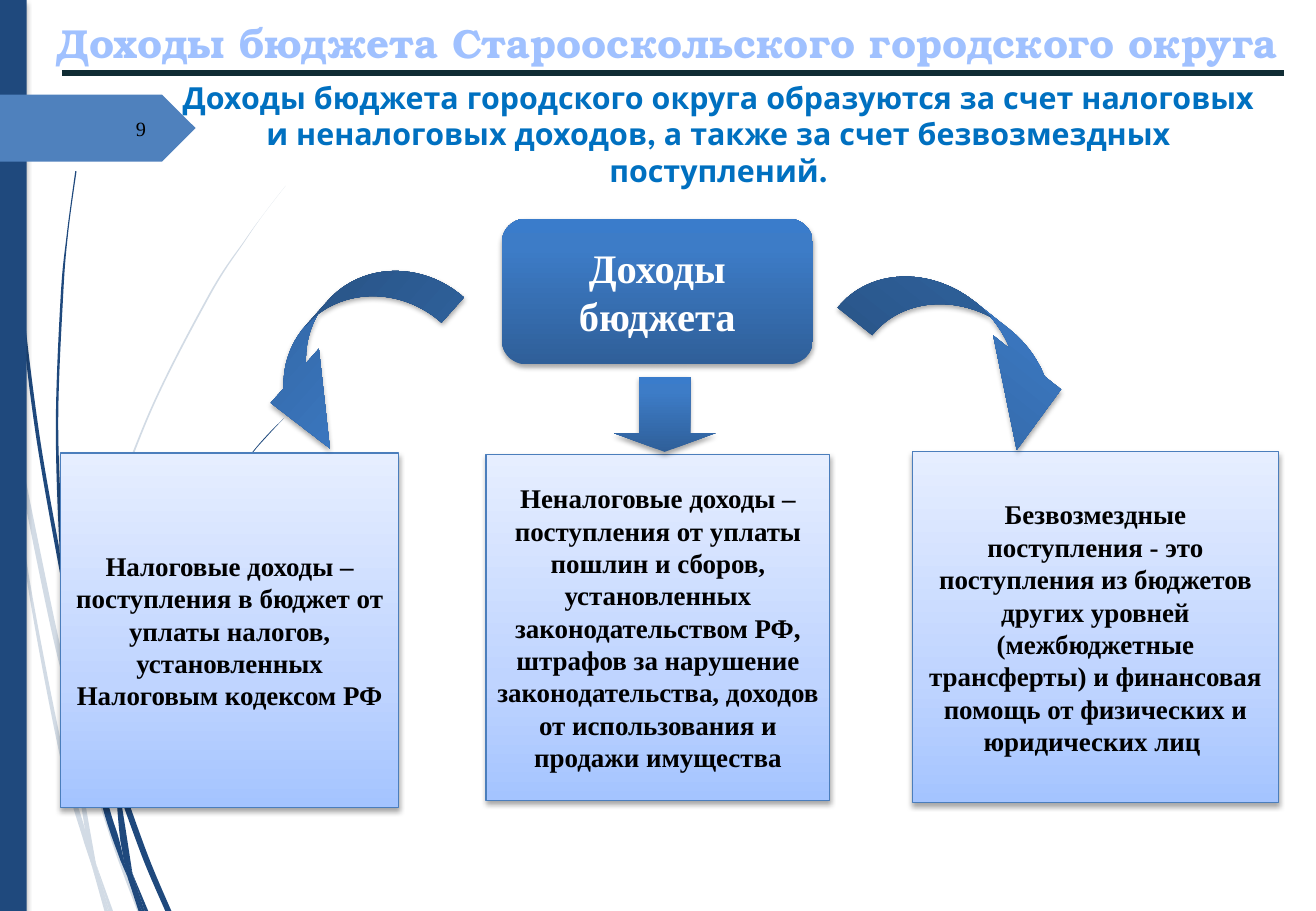
import pptx
import pptx.dml.color
import pptx.enum.shapes
import pptx.enum.text
import pptx.oxml
import pptx.oxml.ns
import pptx.util

Inches = pptx.util.Inches
Pt = pptx.util.Pt
Shape = pptx.enum.shapes.MSO_SHAPE
Align = pptx.enum.text.PP_ALIGN
Anchor = pptx.enum.text.MSO_ANCHOR

SERIF = "Times New Roman"
DRAWING = pptx.oxml.ns.nsdecls("a")
COLORS = {
    "navy": "1F497D", "mist": "D2DBE5", "badge": "4F81BD", "title": "A0C1FF",
    "subtitle": "0070C0", "rule": "102C34", "border": "4B7EBC",
    "black": "000000", "white": "FFFFFF",
}
DEEP_BLUE = [(0, "2F5F99"), (80, "3D7CC7"), (100, "3A7CCB")]
LIGHT_BLUE = [(0, "A4C4FF"), (35, "BFD4FF"), (100, "E6EEFF")]

# Each wisp has two edges; each edge is a smooth curve through its points
PALE_WISPS = [
    ([(0, 2.82), (.06, 3.22), (.08, 3.5)], [(.07, 3.44), (0, 2.99)]),
    ([(.11, 3.45), (.47, 5.2), (.64, 5.86)], [(.63, 5.99), (.43, 5.22), (.13, 3.76)]),
    ([(.66, 5.96), (.69, 6.07), (.96, 6.91), (1.16, 7.5)],
     [(1.13, 7.5), (.92, 6.93), (.66, 6.1)]),
    ([(.79, 7.11), (.93, 7.5)], [(.9, 7.5)]),
    ([(.08, 3.5), (.13, 3.76), (.23, 4.69), (.52, 6.19), (.7, 6.83), (.76, 7.14)],
     [(.69, 6.93), (.49, 6.21), (.21, 4.7), (.08, 3.5)]),
    ([(.63, 5.99), (.66, 6.1), (.68, 6.46), (.79, 7.11)],
     [(.72, 6.92), (.7, 6.83), (.65, 6.46), (.63, 5.99)]),
    ([(2.35, 1.53), (2.18, 1.75), (2.02, 1.97), (1.71, 2.44), (1.19, 3.48),
      (.81, 4.61), (.64, 5.84)],
     [(.66, 5.96), (.66, 5.84), (.83, 4.62), (1.2, 3.49), (1.72, 2.45),
      (2.02, 1.98), (2.18, 1.75), (2.35, 1.53)]),
    ([(.76, 7.14), (.89, 7.5)], [(.86, 7.5)]),
    ([(.64, 5.86), (.66, 5.96), (.66, 6.1)], [(.63, 5.99)]),
    ([(.7, 6.83), (.79, 7.11), (.9, 7.5)], [(.89, 7.5), (.76, 7.14), (.7, 6.83)]),
]
DARK_WISPS = [
    ([(.02, 0), (.03, .48), (.06, 1.1), (.15, 2.33), (.29, 3.55), (.51, 4.81)],
     [(.49, 4.53), (.32, 3.55), (.17, 2.32), (.07, 1.09), (.04, .48), (.03, 0)]),
    ([(.54, 4.72), (.83, 5.9), (.95, 6.31)], [(.95, 6.45), (.79, 5.92), (.57, 5.05)]),
    ([(.99, 6.41), (1.22, 7.05), (1.41, 7.5)], [(1.36, 7.5), (1.18, 7.08), (.99, 6.56)]),
    ([(.51, 4.77), (.57, 5.05), (.65, 5.56), (.88, 6.57), (.98, 6.91), (1.05, 7.22)],
     [(.99, 7.08), (.83, 6.59), (.61, 5.57), (.51, 4.77)]),
    ([(.63, 1.41), (.56, 1.93), (.52, 2.44), (.48, 3.49), (.52, 4.53), (.54, 4.72)],
     [(.53, 4.71), (.49, 4.49), (.46, 3.49), (.5, 2.44), (.55, 1.93), (.62, 1.41)]),
    ([(1.09, 7.19), (1.22, 7.5)], [(1.19, 7.5)]),
    ([(.49, 4.49), (.54, 4.72), (.57, 5.05)], [(.51, 4.77)]),
    ([(2.34, 3.44), (2.2, 3.58), (2.07, 3.73), (1.82, 4.05), (1.4, 4.74),
      (1.09, 5.51), (.95, 6.31)],
     [(.99, 6.41), (.99, 6.33), (1.12, 5.52), (1.42, 4.76), (1.83, 4.06),
      (2.07, 3.74), (2.2, 3.59), (2.34, 3.44)]),
    ([(1.05, 7.22), (1.17, 7.5)], [(1.14, 7.5)]),
    ([(.95, 6.45), (.99, 6.56), (1.09, 7.19)], [(1.04, 7.06), (.99, 6.91), (.95, 6.45)]),
    ([(.95, 6.31), (.99, 6.41), (.99, 6.56)], [(.95, 6.45)]),
    ([(.99, 6.91), (1.09, 7.19), (1.19, 7.5)], [(1.17, 7.5), (1.05, 7.22), (.99, 6.91)]),
]
INCOME_KINDS = [
    ((.5, 3.73, 2.78, 2.92), .12,
     "Налоговые доходы – поступления в бюджет от уплаты налогов, установленных "
     "Налоговым кодексом РФ"),
    ((4, 3.74, 2.83, 2.85), 0,
     "Неналоговые доходы – поступления от уплаты пошлин и сборов, установленных "
     "законодательством РФ, штрафов за нарушение законодательства, доходов от "
     "использования и продажи имущества"),
    ((7.51, 3.72, 3.01, 2.89), .12,
     "Безвозмездные поступления - это поступления из бюджетов других уровней "
     "(межбюджетные трансферты) и финансовая помощь от физических и юридических лиц "),
]
ARROWS = [
    (Shape.CURVED_DOWN_ARROW, (6.88, 2.57, 2.24, .74), 38.5, (.492, .964, .834)),
    (Shape.CURVED_UP_ARROW, (1.88, 2.5, 1.96, .82), 131.6, (.338, .728, .747)),
    (Shape.DOWN_ARROW, (5.05, 3.1, .84, .62), 0, (.5, .25)),
]


def rgb(name):
    return pptx.dml.color.RGBColor.from_string(COLORS[name])


def curve_segments(edge):
    """Yield the two control points and the end of each curve along an edge."""
    padded = [edge[0], *edge, edge[-1]]
    for a, b, c, d in zip(padded, padded[1:], padded[2:], padded[3:]):
        yield ([q + (r - p) / 6 for p, q, r in zip(a, b, c)],
               [r - (s - q) / 6 for q, r, s in zip(b, c, d)], c)


def add_wisp(page, edges, color):
    down, back = [[(Inches(x), Inches(y)) for x, y in edge] for edge in edges]
    builder = page.shapes.build_freeform(*down[0], scale=1.0)
    builder.add_line_segments(down[1:] + back, close=True)
    shape = builder.convert_to_shape()
    lines = shape._element.spPr.findall(".//" + pptx.oxml.ns.qn("a:lnTo"))
    # The straight step between the two edges stays a line
    bends = lines[:len(down) - 1] + lines[len(down):]
    segments = [*curve_segments(down), *curve_segments(back)]
    for line, segment in zip(bends, segments):
        points = "".join(f'<a:pt x="{round(x - shape.left)}" y="{round(y - shape.top)}"/>'
                         for x, y in segment)
        line.getparent().replace(line, pptx.oxml.parse_xml(
            f'<a:cubicBezTo {DRAWING}>{points}</a:cubicBezTo>'))
    style_plain(shape, color)


def style_plain(shape, color):
    shape.fill.solid()
    shape.fill.fore_color.rgb = rgb(color)
    shape.line.fill.background()
    shape.shadow.inherit = False


def add_shadow(shape, opacity, blur, distance):
    shape.shadow.inherit = False
    effects = shape._element.spPr.find(pptx.oxml.ns.qn("a:effectLst"))
    effects.append(pptx.oxml.parse_xml(
        f'<a:outerShdw {DRAWING} blurRad="{Pt(blur)}" dist="{Pt(distance)}" '
        f'dir="5400000" rotWithShape="0"><a:srgbClr val="{COLORS["black"]}">'
        f'<a:alpha val="{opacity * 1000}"/></a:srgbClr></a:outerShdw>'))


def add_shape(page, kind, area, adjustments=()):
    shape = page.shapes.add_shape(kind, *map(Inches, area))
    for index, value in enumerate(adjustments):
        shape.adjustments[index] = value
    return shape


def add_gradient_shape(page, kind, area, stops, adjustments=()):
    shape = add_shape(page, kind, area, adjustments)
    marks = "".join(f'<a:gs pos="{place * 1000}"><a:srgbClr val="{color}"/></a:gs>'
                    for place, color in stops)
    shape._element.spPr.insert(2, pptx.oxml.parse_xml(
        f'<a:gradFill {DRAWING} rotWithShape="1"><a:gsLst>{marks}</a:gsLst>'
        '<a:lin ang="16200000" scaled="0"/></a:gradFill>'))
    shape.line.fill.background()
    add_shadow(shape, 35, 3.1, 1.8)
    return shape


def write(box, text, size, color, font=SERIF, bold=True, align=Align.CENTER,
          anchor=Anchor.MIDDLE, insets=(.1, .05)):
    frame = box.text_frame
    frame.word_wrap = True
    frame.vertical_anchor = anchor
    frame.margin_left = frame.margin_right = Inches(insets[0])
    frame.margin_top = frame.margin_bottom = Inches(insets[1])
    para = frame.paragraphs[0]
    para.text = text
    para.alignment = align
    para.font.name, para.font.size, para.font.bold = font, Pt(size), bold
    para.font.color.rgb = rgb(color)


def add_text(page, area, *content, **options):
    write(page.shapes.add_textbox(*map(Inches, area)), *content, **options)


def main():
    deck = pptx.Presentation()
    deck.slide_width, deck.slide_height = Inches(10.83), Inches(7.5)
    page = deck.slides.add_slide(deck.slide_layouts[6])

    # Background wisps, side band and page number badge
    for wisps, color in ((PALE_WISPS, "mist"), (DARK_WISPS, "navy")):
        for edges in wisps:
            add_wisp(page, edges, color)
    band = add_shape(page, Shape.RECTANGLE, (0, 0, .22, 7.5))
    style_plain(band, "navy")
    add_shadow(band, 25, 3, 2)
    style_plain(add_shape(page, Shape.PENTAGON, (0, .78, 1.61, .55), (.5,)), "badge")

    # Heading
    add_text(page, (.37, .1, 10.46, .62), "Доходы бюджета Старооскольского городского округа",
             24, "title", font="TeX Gyre Bonum", align=Align.LEFT, anchor=Anchor.TOP)
    add_text(page, (1.4, .6, 9.03, 1.34),
             "Доходы бюджета городского округа образуются за счет налоговых и неналоговых "
             "доходов, а также за счет безвозмездных поступлений.",
             18, "subtitle", font="League Spartan", anchor=Anchor.TOP)
    add_text(page, (.61, .86, .69, .4), "9", 12, "black", bold=False, align=Align.RIGHT)
    rule = page.shapes.add_connector(pptx.enum.shapes.MSO_CONNECTOR.STRAIGHT,
                                     Inches(.51), Inches(.6), Inches(10.57), Inches(.6))
    rule.line.color.rgb = rgb("rule")
    rule.line.width = Pt(3.75)
    rule._element.spPr.append(pptx.oxml.parse_xml(f'<a:effectLst {DRAWING}/>'))

    # Income scheme: the total, its three kinds and the arrows between them
    total = add_gradient_shape(page, Shape.ROUNDED_RECTANGLE, (4.13, 1.8, 2.56, 1.2),
                               DEEP_BLUE, (.167,))
    write(total, "Доходы бюджета", 24, "white", insets=(.14, .05))
    for area, inset, text in INCOME_KINDS:
        card = add_gradient_shape(page, Shape.RECTANGLE, area, LIGHT_BLUE)
        card.line.color.rgb = rgb("border")
        card.line.width = Pt(.75)
        write(card, text, 16, "black", insets=(inset, 0))
    for kind, area, angle, adjustments in ARROWS:
        add_gradient_shape(page, kind, area, DEEP_BLUE, adjustments).rotation = angle

    deck.save("out.pptx")


if __name__ == "__main__":
    main()
